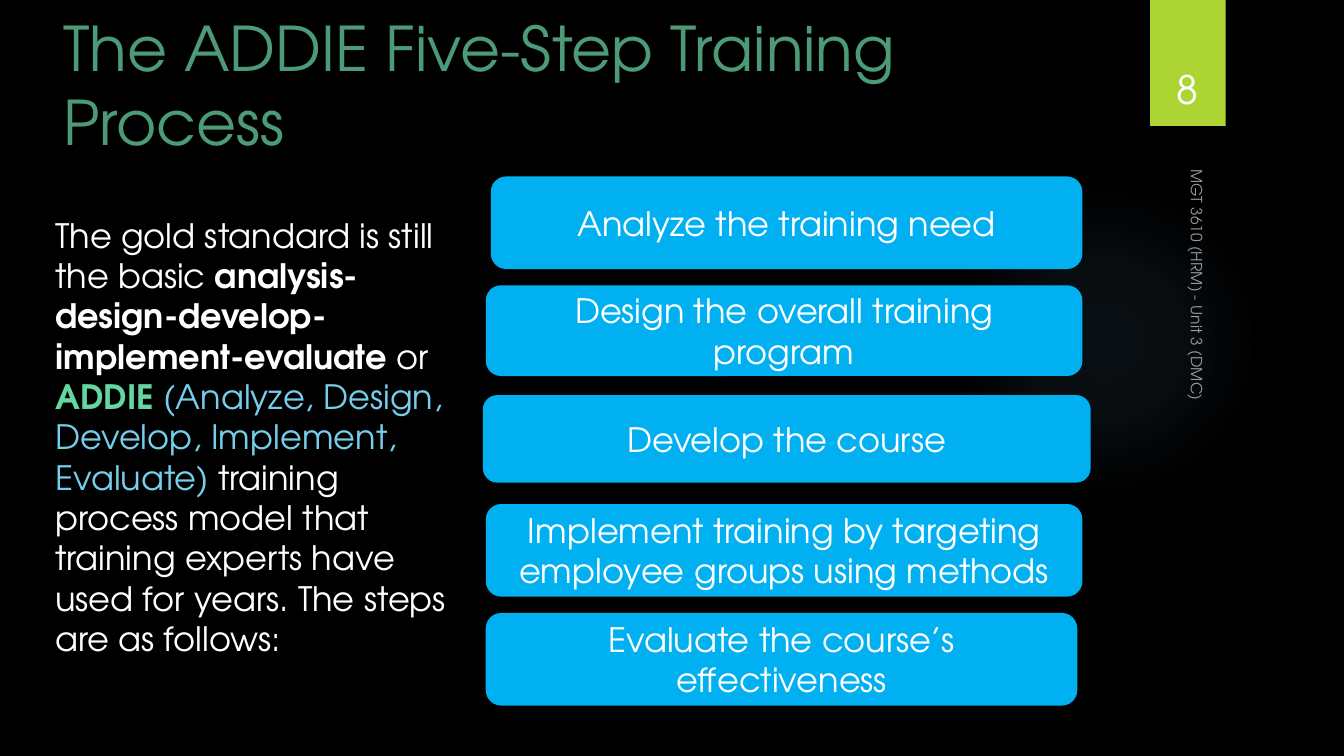
from pptx import Presentation
from pptx.dml.color import RGBColor
from pptx.enum import shapes, text
from pptx.oxml import parse_xml
from pptx.oxml.ns import nsdecls, qn
from pptx.util import Pt

# Content
TITLE = "The ADDIE Five-Step Training Process"
COURSE = "MGT 3610 (HRM) - Unit 3 (DMC)"
PAGE_NUMBER = "8"
INTRO = [  # words, colour, bold
    ("The gold standard is still the basic ", "white", False),
    ("analysis-design-develop-implement-evaluate", "white", True),
    (" or ", "white", False),
    ("ADDIE ", "mint", True),
    ("(Analyze, Design, Develop, Implement, Evaluate) ", "sky", False),
    ("training process model that training experts have used for years. "
     "The steps are as follows:", "white", False),
]
STEPS = [  # words, then left, top, width, height
    ("Analyze the training need", (350.6, 126, 422.6, 66.2)),
    ("Design the overall training program", (347, 203.8, 426.2, 64.8)),
    ("Develop the course", (344.9, 282.2, 434.2, 62.6)),
    ("Implement training by targeting employee groups using methods",
     (347, 360, 426.2, 66.2)),
    ("Evaluate the course’s effectiveness", (347, 437.8, 422.6, 66.2)),
]

THEME = {
    "font": "TeX Gyre Adventor",
    "colours": {"black": "000000", "white": "FFFFFF", "title": "4C9A77",
                "mint": "65D6A0", "sky": "75CEEC", "step": "00B0F0",
                "tab": "ACD433", "glow": "7AC4F0"},
    "sizes": {"title": 44, "number": 28, "body": 24, "course": 11},
}
GLOW_STOPS = [(0, 7), (36, 6), (69, 0)]  # position and opacity, percent


def colour(name):
    return RGBColor.from_string(THEME["colours"][name])


def add_block(page, kind, place, fill):
    block = page.shapes.add_shape(kind, *map(Pt, place))
    block.shadow.inherit = False
    block.fill.solid()
    block.fill.fore_color.rgb = colour(fill)
    block.line.fill.background()
    return block


def write(box, spans, size, anchor=text.MSO_ANCHOR.TOP,
          align=text.PP_ALIGN.LEFT):
    frame = box.text_frame
    frame.word_wrap = True
    frame.vertical_anchor = anchor
    para = frame.paragraphs[0]
    para.alignment = align
    para.font.name = THEME["font"]
    para.font.size = Pt(THEME["sizes"][size])
    for words, tint, bold in spans:
        span = para.add_run()
        span.text = words
        span.font.bold = bold
        span.font.color.rgb = colour(tint)
    return para


def add_text(page, place, *args, **options):
    box = page.shapes.add_textbox(*map(Pt, place))
    write(box, *args, **options)
    return box


def add_glow(page, place):
    glow = add_block(page, shapes.MSO_SHAPE.OVAL, place, "glow")
    stops = "".join(
        f'<a:gs pos="{position * 1000}">'
        f'<a:srgbClr val="{THEME["colours"]["glow"]}">'
        f'<a:alpha val="{opacity * 1000}"/></a:srgbClr></a:gs>'
        for position, opacity in GLOW_STOPS)
    gradient = parse_xml(
        f'<a:gradFill {nsdecls("a")}><a:gsLst>{stops}</a:gsLst>'
        '<a:path path="circle"><a:fillToRect l="50000" t="50000" '
        'r="50000" b="50000"/></a:path></a:gradFill>')
    properties = glow._element.spPr
    properties.replace(properties.find(qn("a:solidFill")), gradient)


def main():
    deck = Presentation()
    deck.slide_width, deck.slide_height = Pt(960), Pt(540)
    page = deck.slides.add_slide(deck.slide_layouts[6])
    page.background.fill.solid()
    page.background.fill.fore_color.rgb = colour("black")

    # Backdrop glow and page number tab
    add_glow(page, (677.5, 131.8, 221.8, 221.8))
    add_block(page, shapes.MSO_SHAPE.RECTANGLE, (821.5, 0, 54, 90), "tab")

    # Title
    add_text(page, (38.2, 3.6, 760.3, 107.3), [(TITLE, "title", False)],
             "title")

    # Course name, turned to read downwards
    course = add_text(page, (704.9, 254.2, 303.8, 23.8),
                      [(COURSE, "white", False)], "course",
                      anchor=text.MSO_ANCHOR.BOTTOM)
    course.rotation = 90
    for tint in course._element.iter(qn("a:srgbClr")):
        tint.append(parse_xml(f'<a:alpha {nsdecls("a")} val="60000"/>'))

    # Page number
    add_text(page, (815, 23, 66.2, 60.5), [(PAGE_NUMBER, "white", False)],
             "number", anchor=text.MSO_ANCHOR.BOTTOM,
             align=text.PP_ALIGN.CENTER)

    # The five steps
    for words, place in STEPS:
        step = add_block(page, shapes.MSO_SHAPE.ROUNDED_RECTANGLE, place,
                         "step")
        write(step, [(words, "white", False)], "body",
              anchor=text.MSO_ANCHOR.MIDDLE, align=text.PP_ALIGN.CENTER)

    # Introduction
    add_text(page, (32.4, 149.8, 308.2, 326.9), INTRO, "body")

    deck.save("out.pptx")


if __name__ == "__main__":
    main()
